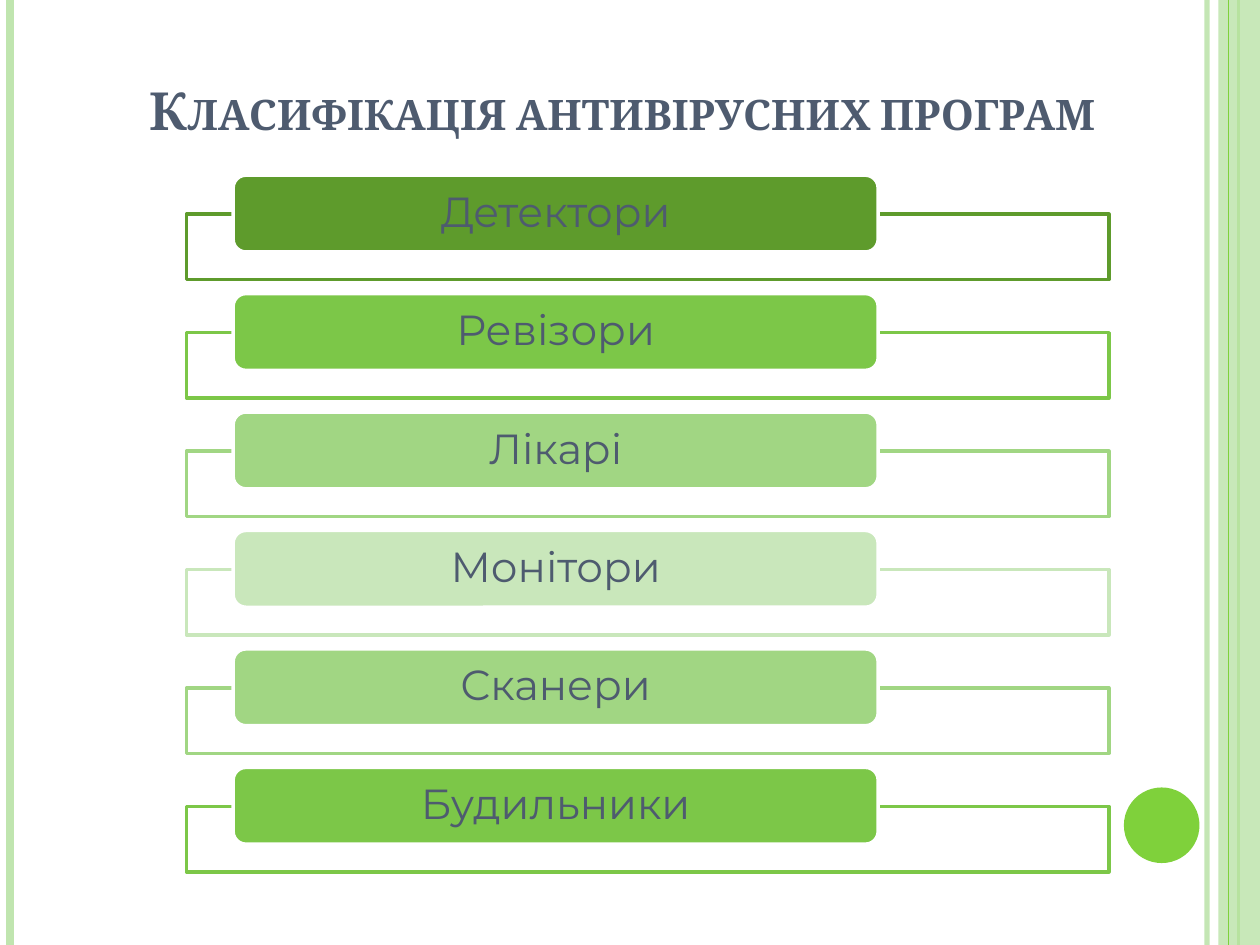
import lxml.etree
import pptx
import pptx.util
import pptx.dml.color
import pptx.enum.shapes
import pptx.enum.text
import pptx.oxml.ns

Inches, Pt = pptx.util.Inches, pptx.util.Pt
SHAPE = pptx.enum.shapes.MSO_SHAPE
ANCHOR = pptx.enum.text.MSO_ANCHOR
CENTER = pptx.enum.text.PP_ALIGN.CENTER
qn = pptx.oxml.ns.qn

TITLE = "Класифікація антивірусних програм"
KINDS = [
    ("Детектори", "5E9B2C"),
    ("Ревізори", "7CC748"),
    ("Лікарі", "A1D683"),
    ("Монітори", "C9E7BB"),
    ("Сканери", "A1D683"),
    ("Будильники", "7CC748"),
]
PALE, GREEN, INK, WHITE = "C0E5AF", "7FD13B", "4E5B6F", "FFFFFF"
# Vertical rules: x, colour, width, opacity
BACK = [(9.58, PALE, 3, 93), (0.08, PALE, 4.5, 100), (9.83, GREEN, 1.5, 100)]
FRONT = (9.75, GREEN, 0.75, 100)
TOP, STEP, DROP = 1.39, 0.94, 0.31


def paint(fill, color):
    fill.solid()
    fill.fore_color.rgb = pptx.dml.color.RGBColor.from_string(color)


def fade(item, alpha):
    """Set the opacity of the first colour in a shape, in percent."""
    color = next(item._element.spPr.iter(qn("a:srgbClr")))
    lxml.etree.SubElement(color, qn("a:alpha")).set("val", str(alpha * 1000))


def rule(x, color, width, alpha):
    line = slide.shapes.add_connector(
        pptx.enum.shapes.MSO_CONNECTOR.STRAIGHT,
        Inches(x), 0, Inches(x), Inches(7.5))
    paint(line.line.fill, color)
    line.line.width = Pt(width)
    if alpha < 100:
        fade(line, alpha)
    lxml.etree.SubElement(line._element.spPr, qn("a:effectLst"))


def block(kind, box, fill, edge=None, alpha=100):
    shape = slide.shapes.add_shape(kind, *map(Inches, box))
    shape.shadow.inherit = False
    paint(shape.fill, fill)
    if alpha < 100:
        fade(shape, alpha)
    if edge:
        paint(shape.line.fill, edge)
        shape.line.width = Pt(2)
    else:
        shape.line.fill.background()
    return shape


def write(shape, text, font, size, anchor, bold=False):
    frame = shape.text_frame
    frame.text = text
    frame.word_wrap = True
    frame.vertical_anchor = anchor
    para = frame.paragraphs[0]
    para.alignment = CENTER
    run = para.runs[0]
    run.font.name, run.font.size, run.font.bold = font, Pt(size), bold
    paint(run.font.fill, INK)
    return para


deck = pptx.Presentation()
deck.slide_width, deck.slide_height = Inches(10), Inches(7.5)
slide = deck.slides.add_slide(deck.slide_layouts[6])
paint(slide.background.fill, WHITE)

for args in BACK:
    rule(*args)
block(SHAPE.RECTANGLE, (9.67, 0, 0.33, 7.5), PALE, alpha=87)
rule(*FRONT)
block(SHAPE.OVAL, (8.92, 6.25, 0.6, 0.6), GREEN)

title = slide.shapes.add_textbox(*map(Inches, (0.5, 0.3, 8.88, 0.87)))
para = write(title, TITLE, "Cambria", 30, ANCHOR.BOTTOM, bold=True)
para.runs[0]._r.get_or_add_rPr().set("cap", "small")

for i, (name, color) in enumerate(KINDS):
    y = TOP + i * STEP
    block(SHAPE.RECTANGLE, (1.48, y + DROP, 7.32, 0.52), WHITE, color, 90)
    label = block(SHAPE.ROUNDED_RECTANGLE, (1.85, y, 5.12, 0.61), color, WHITE)
    para = write(label, name, "Montserrat", 24, ANCHOR.MIDDLE)
    para.line_spacing = 0.9
    frame = label.text_frame
    frame.margin_left = frame.margin_right = Inches(0.19)
    frame.margin_top = frame.margin_bottom = 0

deck.save("out.pptx")
